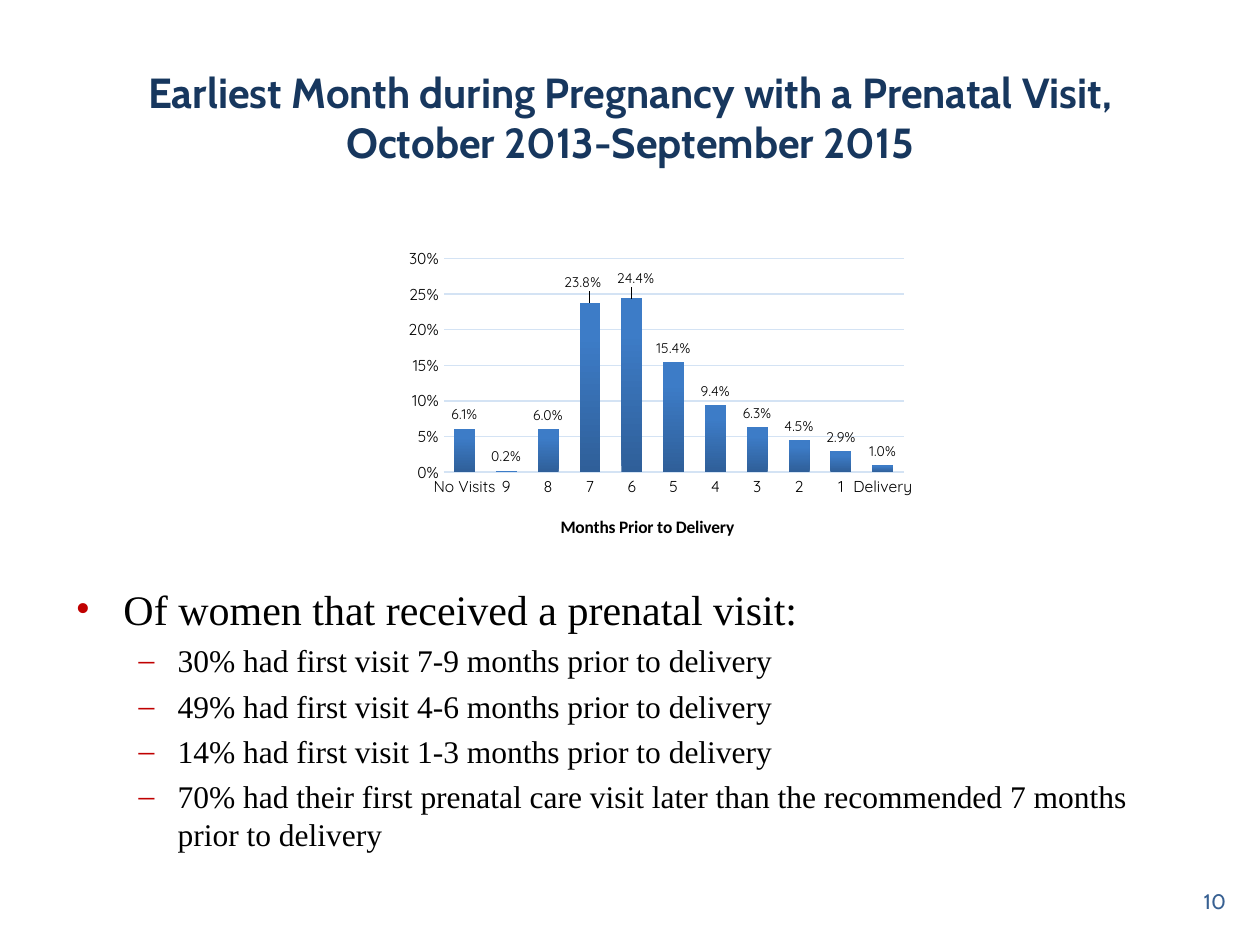
from dataclasses import dataclass

from lxml import etree
from pptx import Presentation
from pptx import util as u
from pptx.chart.data import CategoryChartData
from pptx.dml.color import RGBColor
from pptx.enum import chart as ch
from pptx.enum import text as t
from pptx.oxml import ns


@dataclass(frozen=True)
class Theme:
    """Colours, fonts and type sizes."""
    navy: str = "17375E"
    blue: str = "376092"
    red: str = "C00000"
    black: str = "000000"
    grid: str = "D4E3F4"
    dark: str = "2F5F99"
    light: str = "3D7CC7"
    head: str = "Cabin"
    body: str = "Times New Roman"
    axis: str = "Quicksand"
    label: str = "Calibri"
    big: int = 24
    mid: int = 18
    page: int = 12
    name: int = 10
    tick: int = 9
    small: int = 8


@dataclass(frozen=True)
class Item:
    """One bulleted line."""
    words: str
    level: int = 1


@dataclass(frozen=True)
class Style:
    """Look of one bullet level."""
    mark: str
    size: int
    left: float
    hang: float


THEME = Theme()
STYLES = (Style("•", THEME.big, 0.38, 0.38), Style("–", THEME.mid, 0.81, 0.31))
ITEMS = (
    Item("Of women that received a prenatal visit:", 0),
    Item("30% had first visit 7-9 months prior to delivery"),
    Item("49% had first visit 4-6 months prior to delivery"),
    Item("14% had first visit 1-3 months prior to delivery"),
    Item("70% had their first prenatal care visit later than the "
         "recommended 7 months prior to delivery"),
)
MONTHS = ("No Visits", *"987654321", "Delivery")
RATES = (0.061, 0.002, 0.06, 0.238, 0.244, 0.154, 0.094, 0.063, 0.045, 0.029, 0.01)
NUDGES = {3: -0.013, 4: 0.007}


def paint(font, face: str, size: int, color: str, bold: bool = False) -> None:
    """Set the face, size, colour and weight of a font."""
    font.name, font.size, font.bold = face, u.Pt(size), bold
    font.color.rgb = RGBColor.from_string(color)


def write(para, words: str, *, face: str, size: int, color: str,
          bold: bool = False, align=None) -> None:
    """Put formatted text in a paragraph."""
    run = para.add_run()
    run.text = words
    paint(run.font, face, size, color, bold)
    if align is not None:
        para.alignment = align


def move(shape, left: float, top: float, width: float, height: float) -> None:
    """Place a shape, in inches."""
    shape.left, shape.top = u.Inches(left), u.Inches(top)
    shape.width, shape.height = u.Inches(width), u.Inches(height)


def mark(para, style: Style) -> None:
    """Give a paragraph its indent and red bullet."""
    props = para._p.get_or_add_pPr()
    props.set("marL", str(u.Inches(style.left)))
    props.set("indent", str(-u.Inches(style.hang)))
    tint = etree.SubElement(props, ns.qn("a:buClr"))
    etree.SubElement(tint, ns.qn("a:srgbClr"), val=THEME.red)
    etree.SubElement(props, ns.qn("a:buFont"), typeface=THEME.body)
    etree.SubElement(props, ns.qn("a:buChar"), char=style.mark)


def place(node, index: int, **values) -> None:
    """Give a chart part a manual layout."""
    for old in node.findall(ns.qn("c:layout")):
        node.remove(old)
    layout = etree.Element(ns.qn("c:layout"))
    manual = etree.SubElement(layout, ns.qn("c:manualLayout"))
    for key, value in values.items():
        etree.SubElement(manual, ns.qn(f"c:{key}"), val=str(value))
    node.insert(index, layout)


def rule(line) -> None:
    """Draw a thin pale chart line."""
    line.color.rgb = RGBColor.from_string(THEME.grid)
    line.width = u.Pt(0.75)


def style_axes(chart) -> None:
    """Format both axes and the axis title."""
    cat, val = chart.category_axis, chart.value_axis
    for axis in (cat, val):
        axis.major_tick_mark = axis.minor_tick_mark = ch.XL_TICK_MARK.NONE
        paint(axis.tick_labels.font, THEME.axis, THEME.tick, THEME.black)
    rule(cat.format.line)
    rule(val.major_gridlines.format.line)
    val.format.line.fill.background()
    val.minimum_scale, val.maximum_scale, val.major_unit = 0, 0.3, 0.05
    val.tick_labels.number_format = "0%"
    val.tick_labels.number_format_is_linked = False
    title = cat.axis_title
    write(title.text_frame.paragraphs[0], "Months Prior to Delivery",
          face=THEME.label, size=THEME.name, color=THEME.black, bold=True)
    place(title._element, 1, xMode="edge", yMode="edge", x=0.365, y=0.86)


def style_bars(plot) -> None:
    """Format the columns and their labels."""
    plot.gap_width, plot.overlap, plot.vary_by_categories = 100, -24, False
    bars = plot.series[0]
    fill = bars.format.fill
    fill.gradient()
    fill.gradient_angle = 90
    stops = zip(fill.gradient_stops, (0, 0.8), (THEME.dark, THEME.light))
    for stop, spot, color in stops:
        stop.position, stop.color.rgb = spot, RGBColor.from_string(color)
    labels = bars.data_labels
    labels.show_value = True
    labels.number_format, labels.number_format_is_linked = "0.0%", False
    labels.position = ch.XL_LABEL_POSITION.OUTSIDE_END
    paint(labels.font, THEME.axis, THEME.small, THEME.black)
    for index, shift in NUDGES.items():
        label = bars.points[index].data_label
        paint(label.font, THEME.axis, THEME.small, THEME.black)
        label.position = ch.XL_LABEL_POSITION.OUTSIDE_END
        place(labels._element.find(f"{ns.qn('c:dLbl')}[{len(labels._element.findall(ns.qn('c:dLbl')))}]"),
              1, x=shift, y=-0.02)


def add_graph(slide) -> None:
    """Add the column chart of first visits."""
    data = CategoryChartData(number_format="0.0%")
    data.categories = MONTHS
    data.add_series("Series 1", RATES)
    box = map(u.Inches, (2.83, 1.92, 4.41, 2.5))
    chart = slide.shapes.add_chart(ch.XL_CHART_TYPE.COLUMN_CLUSTERED, *box, data).chart
    chart.has_legend = chart.has_title = False
    paint(chart.font, THEME.label, THEME.name, THEME.black)
    style_axes(chart)
    style_bars(chart.plots[0])
    area = chart._chartSpace.find(f".//{ns.qn('c:plotArea')}")
    place(area, 0, layoutTarget="inner", xMode="edge", yMode="edge",
          x=0.158, y=0.053, w=0.836, h=0.678)


def add_list(body) -> None:
    """Fill the body with bulleted lines."""
    move(body, 0.5, 4.58, 9, 2.3)
    frame = body.text_frame
    for index, item in enumerate(ITEMS):
        para = frame.add_paragraph() if index else frame.paragraphs[0]
        style = STYLES[item.level]
        para.level = item.level
        para.space_before = u.Pt(style.size * 0.24 if index else 0)
        mark(para, style)
        write(para, item.words, face=THEME.body, size=style.size, color=THEME.black)


def main() -> None:
    """Build and save the slide."""
    deck = Presentation()
    deck.slide_width, deck.slide_height = u.Inches(10), u.Inches(7.5)
    slide = deck.slides.add_slide(deck.slide_layouts[1])
    title, body = slide.placeholders
    move(title, 0.5, 0.3, 9, 1.25)
    title.text_frame.vertical_anchor = t.MSO_ANCHOR.MIDDLE
    write(title.text_frame.paragraphs[0],
          "Earliest Month during Pregnancy with a Prenatal Visit, "
          "October 2013-September 2015", face=THEME.head, size=THEME.big,
          color=THEME.navy, bold=True, align=t.PP_ALIGN.CENTER)
    add_list(body)
    page = slide.shapes.add_textbox(*map(u.Inches, (7.5, 6.95, 2.33, 0.4)))
    page.text_frame.word_wrap = True
    page.text_frame.vertical_anchor = t.MSO_ANCHOR.MIDDLE
    write(page.text_frame.paragraphs[0], "10", face=THEME.head, size=THEME.page,
          color=THEME.blue, align=t.PP_ALIGN.RIGHT)
    add_graph(slide)
    deck.save("out.pptx")


if __name__ == "__main__":
    main()
